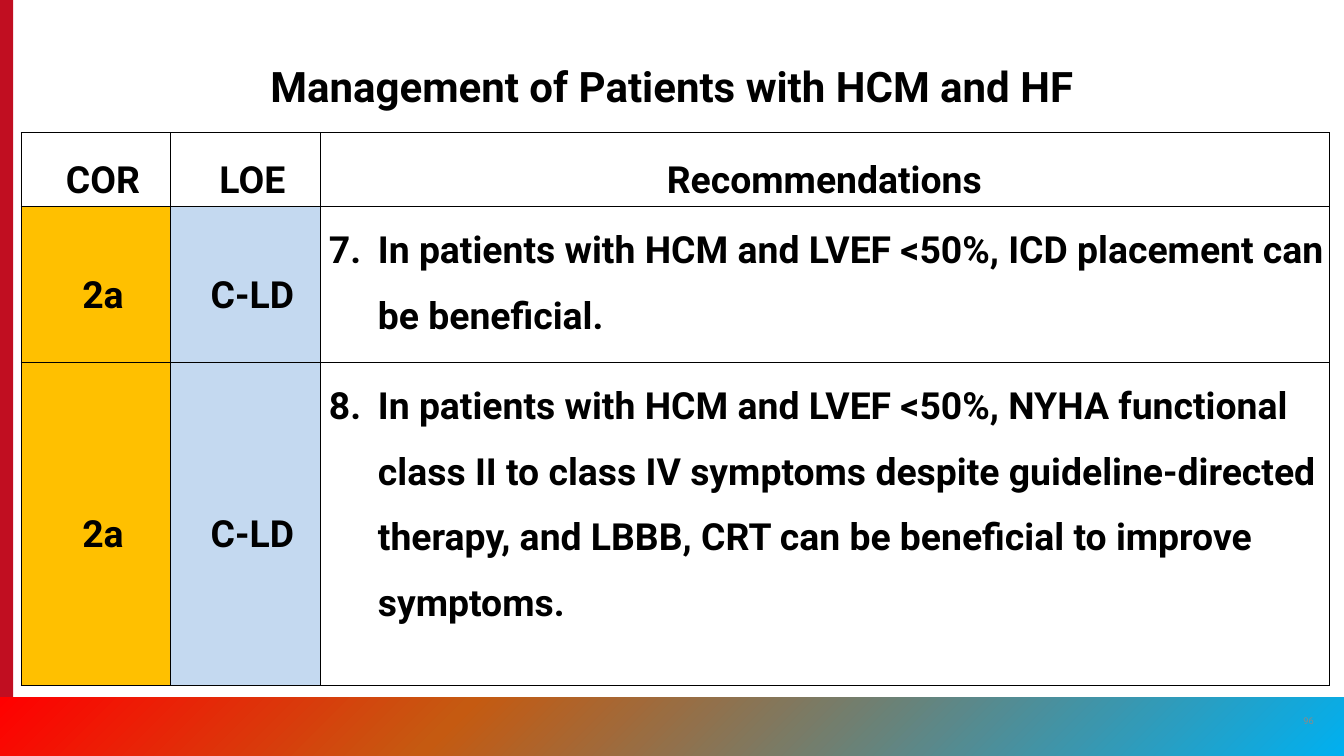
"""Build the slide with recommendations for patients with HCM and HF."""
import pptx
import pptx.dml.color
import pptx.enum.shapes
import pptx.enum.text
import pptx.oxml
import pptx.oxml.ns
import pptx.util

Cm = pptx.util.Cm
Pt = pptx.util.Pt
ALIGN = pptx.enum.text.PP_ALIGN
MIDDLE = pptx.enum.text.MSO_ANCHOR.MIDDLE
TOP = pptx.enum.text.MSO_ANCHOR.TOP
NS = pptx.oxml.ns.nsdecls("a")

COLORS = {
    "text": "000000", "bar": "C10E21", "number": "8A8B8A", "white": "FFFFFF",
    "cor": "FFC000", "loe": "C4D9F0",
    "red": "FF0000", "brown": "C55A11", "blue": "00B0F0",
}
ROWS = [
    ("COR", "LOE", "Recommendations"),
    ("2a", "C-LD", "7.\tIn patients with HCM and LVEF <50%, ICD placement can be beneficial."),
    ("2a", "C-LD", "8.\tIn patients with HCM and LVEF <50%, NYHA functional class II to "
     "class IV symptoms despite guideline-directed therapy, and LBBB, CRT can be "
     "beneficial to improve symptoms."),
]


class Deck:
    """Hold the style and the current slide."""

    def __init__(self, prs, font):
        """Add a slide that has only a title."""
        self.s = prs.slides.add_slide(prs.slide_layouts[5])
        self.font = font

    def put_text(self, tf, text, size, color="text", bold=True, align=ALIGN.CENTER):
        """Set one paragraph of text and format it."""
        tf.text = text
        tf.word_wrap = True
        p = tf.paragraphs[0]
        p.alignment = align
        for r in p.runs:
            r.font.name = self.font
            r.font.size = Pt(size)
            r.font.bold = bold
            r.font.color.rgb = pptx.dml.color.RGBColor.from_string(COLORS[color])
        return p

    def title(self, text, box, size):
        """Move and fill the title placeholder."""
        sp = self.s.shapes.title
        sp.left, sp.top, sp.width, sp.height = map(Cm, box)
        sp.text_frame.vertical_anchor = MIDDLE
        self.put_text(sp.text_frame, text, size)

    def text(self, text, box, size, color):
        """Add a small text box."""
        tf = self.s.shapes.add_textbox(*map(Cm, box)).text_frame
        tf.vertical_anchor = MIDDLE
        tf.margin_left = tf.margin_right = 0
        self.put_text(tf, text, size, color, bold=False)

    def rect(self, box, color):
        """Add a plain rectangle without an outline."""
        sp = self.s.shapes.add_shape(
            pptx.enum.shapes.MSO_SHAPE.RECTANGLE, *map(Cm, box))
        sp.shadow.inherit = False
        sp.line.fill.background()
        sp.fill.solid()
        sp.fill.fore_color.rgb = pptx.dml.color.RGBColor.from_string(COLORS[color])
        return sp

    def band(self, box, stops, angle):
        """Add a rectangle with a linear gradient."""
        sp = self.rect(box, stops[0][1])
        gs = "".join(f'<a:gs pos="{pos * 1000}"><a:srgbClr val="{COLORS[name]}"/></a:gs>'
                     for pos, name in stops)
        grad = pptx.oxml.parse_xml(
            f'<a:gradFill {NS} rotWithShape="1"><a:gsLst>{gs}</a:gsLst>'
            f'<a:lin ang="{angle * 60000}" scaled="0"/></a:gradFill>')
        spPr = sp._element.spPr
        spPr.replace(spPr.find(pptx.oxml.ns.qn("a:solidFill")), grad)

    def cell(self, cell, text, fill, size, indent, hanging):
        """Fill, border and label one table cell."""
        cell.margin_left = cell.margin_right = cell.margin_top = cell.margin_bottom = 0
        cell.vertical_anchor = TOP if hanging else MIDDLE
        cell.fill.solid()
        cell.fill.fore_color.rgb = pptx.dml.color.RGBColor.from_string(COLORS[fill])
        tcPr = cell._tc.get_or_add_tcPr()
        for i, side in enumerate("LRTB"):
            tcPr.insert(i, pptx.oxml.parse_xml(
                f'<a:ln{side} {NS} w="12700"><a:solidFill><a:srgbClr val="{COLORS["text"]}"/>'
                f'</a:solidFill></a:ln{side}>'))
        p = self.put_text(cell.text_frame, text, size,
                          align=ALIGN.LEFT if hanging else ALIGN.CENTER)
        p.line_spacing = 1.5
        pPr = p._p.get_or_add_pPr()
        pPr.set("marL", str(int(Cm(indent))))
        pPr.set("indent", str(-int(Cm(hanging))))

    def table(self, rows, left, top, widths, heights, size):
        """Add the table of recommendations."""
        frame = self.s.shapes.add_table(
            len(rows), len(widths), Cm(left), Cm(top), Cm(sum(widths)), Cm(sum(heights)))
        table = frame.table
        for col, width in zip(table.columns, widths):
            col.width = Cm(width)
        for i, (row, height) in enumerate(zip(rows, heights)):
            table.rows[i].height = Cm(height)
            for j, text in enumerate(row):
                fill = ("cor", "loe", "white")[j] if i else "white"
                indent, hanging = (0.43, 0) if j < 2 else (1.75, 1.48) if i else (0, 0)
                self.cell(table.cell(i, j), text, fill, size, indent, hanging)


def main():
    """Draw the slide and save it."""
    prs = pptx.Presentation()
    prs.slide_width, prs.slide_height = Cm(40.64), Cm(22.86)
    deck = Deck(prs, "Roboto")
    deck.rect((0, 0, 0.4, 22.86), "bar")
    deck.band((0, 21.08, 40.64, 1.78), [(0, "red"), (34, "brown"), (100, "blue")], 45)
    deck.text("96", (38.96, 21.18, 1.22, 1.22), 8, "number")
    deck.title("Management of Patients with HCM and HF", (4.82, 1.7, 31, 1.8), 36)
    deck.table(ROWS, 0.64, 4.01, (4.52, 4.52, 30.51), (2.24, 4.72, 9.75), 32)
    prs.save("out.pptx")


if __name__ == "__main__":
    main()
